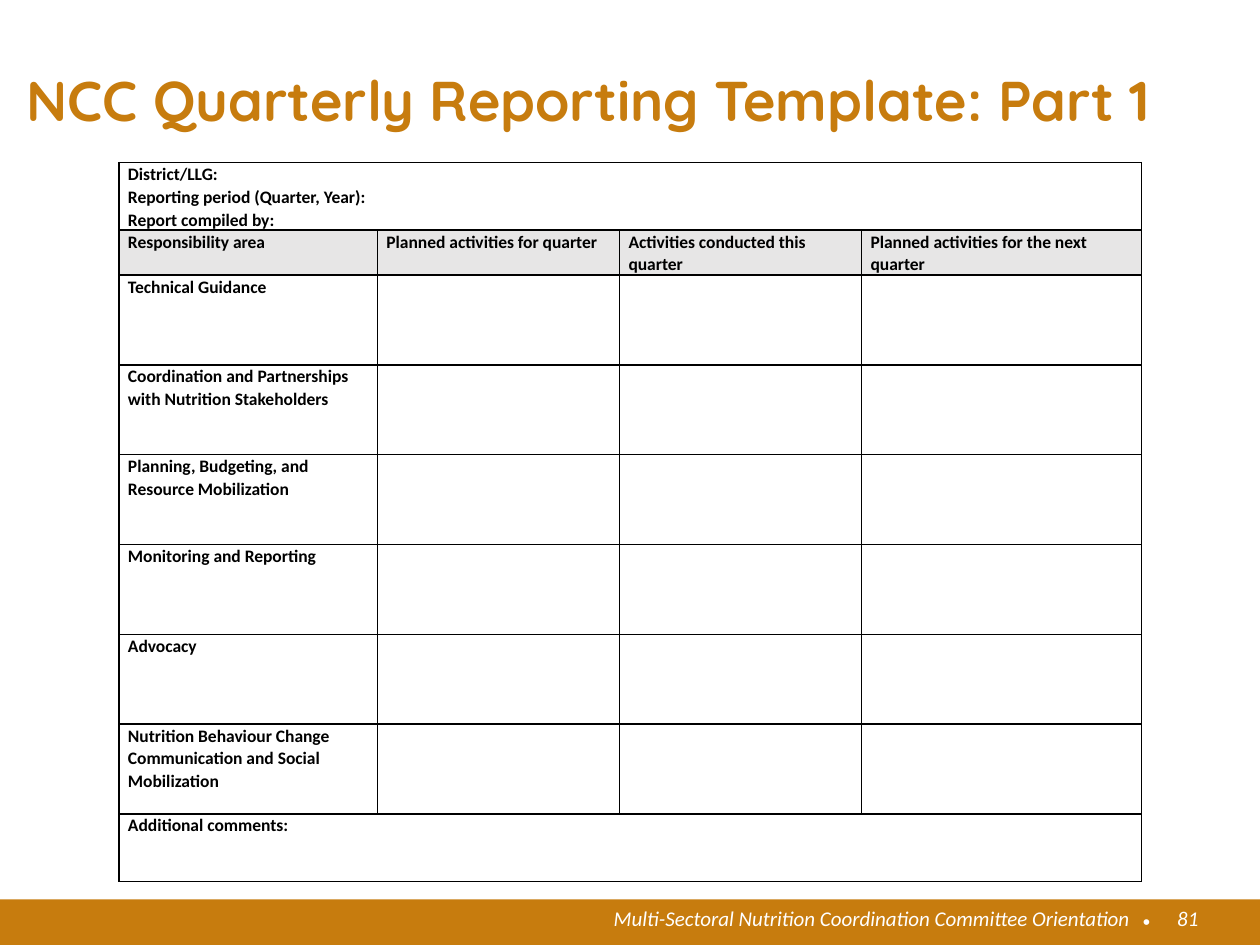
from pptx import Presentation
from pptx.dml.color import RGBColor
from pptx.enum.shapes import MSO_SHAPE
from pptx.enum.text import PP_ALIGN
from pptx.oxml import parse_xml
from pptx.oxml.ns import nsdecls
from pptx.util import Cm, Pt

RECT = MSO_SHAPE.RECTANGLE
LEFT, RIGHT = PP_ALIGN.LEFT, PP_ALIGN.RIGHT
COLORS = {"accent": "C77C0E", "white": "FFFFFF", "black": "000000", "header": "E7E6E6"}

REPORT_FIELDS = ["District/LLG:", "Reporting period (Quarter, Year):", "Report compiled by:"]
HEADERS = [
    "Responsibility area",
    "Planned activities for quarter",
    "Activities conducted this quarter",
    "Planned activities for the next quarter",
]
AREAS = [
    "Technical Guidance",
    "Coordination and Partnerships with Nutrition Stakeholders",
    "Planning, Budgeting, and Resource Mobilization",
    "Monitoring and Reporting",
    "Advocacy",
    "Nutrition Behaviour Change Communication and Social Mobilization",
]
COLUMN_WIDTHS = [5.21, 4.88, 4.88, 5.64]
ROW_HEIGHTS = [1.36, 0.9] + [1.81] * len(AREAS) + [1.36]


def rgb(name):
    """Return the named colour."""
    return RGBColor.from_string(COLORS[name])


def add_run(p, text, size, color, font="Calibri", bold=False, italic=False):
    """Add one formatted run to a paragraph."""
    r = p.add_run()
    r.text = text
    r.font.name, r.font.size = font, Pt(size)
    r.font.bold, r.font.italic = bold, italic
    r.font.color.rgb = rgb(color)


def add_text(s, box, text, size, color, align=LEFT, **style):
    """Add a text box without margins, placed in centimetres."""
    tf = s.shapes.add_textbox(*map(Cm, box)).text_frame
    tf.word_wrap = True
    tf.margin_left = tf.margin_right = tf.margin_top = tf.margin_bottom = 0
    p = tf.paragraphs[0]
    p.alignment = align
    add_run(p, text, size, color, **style)


def add_footer(s):
    """Add the coloured band with event name, dot and page number."""
    sp = s.shapes.add_shape(RECT, 0, Cm(18.13), Cm(25.4), Cm(0.92))
    sp.shadow.inherit = False
    sp.fill.solid()
    sp.fill.fore_color.rgb = rgb("accent")
    sp.line.fill.background()
    add_text(s, (23.32, 18.26, 0.84, 0.81), "81", 12, "white", RIGHT, italic=True)
    add_text(s, (12.29, 18.26, 10.49, 1.02),
             "Multi-Sectoral Nutrition Coordination Committee Orientation",
             12, "white", RIGHT, italic=True)
    add_text(s, (23.04, 18.31, 0.46, 0.51), "•", 12, "white", font="Arial")


def style_cell(cell, fill):
    """Set the margins, black borders and fill of a cell."""
    cell.margin_left = cell.margin_right = Cm(0.18)
    cell.margin_top = cell.margin_bottom = 0
    for side in ("lnL", "lnR", "lnT", "lnB"):
        cell._tc.get_or_add_tcPr().append(parse_xml(
            f'<a:{side} {nsdecls("a")} w="{Pt(1)}"><a:solidFill>'
            f'<a:srgbClr val="{COLORS["black"]}"/></a:solidFill></a:{side}>'))
    cell.fill.solid()
    cell.fill.fore_color.rgb = rgb(fill)


def write_cell(cell, lines):
    """Write bold lines into a cell, one paragraph each."""
    tf = cell.text_frame
    for i, line in enumerate(lines):
        p = tf.add_paragraph() if i else tf.paragraphs[0]
        p.line_spacing = 1.07
        add_run(p, line, 10, "black", bold=True)


def add_report_table(s):
    """Add the quarterly report form."""
    table = s.shapes.add_table(
        len(ROW_HEIGHTS), len(COLUMN_WIDTHS), Cm(2.4), Cm(3.28),
        Cm(sum(COLUMN_WIDTHS)), Cm(sum(ROW_HEIGHTS))).table
    table.first_row = table.horz_banding = False
    for column, width in zip(table.columns, COLUMN_WIDTHS):
        column.width = Cm(width)
    for i, (row, height) in enumerate(zip(table.rows, ROW_HEIGHTS)):
        row.height = Cm(height)
        for cell in row.cells:
            style_cell(cell, "header" if i == 1 else "white")
    last = len(ROW_HEIGHTS) - 1
    for i, lines in ((0, REPORT_FIELDS), (last, ["Additional comments:"])):
        table.cell(i, 0).merge(table.cell(i, len(COLUMN_WIDTHS) - 1))
        write_cell(table.cell(i, 0), lines)
    for j, header in enumerate(HEADERS):
        write_cell(table.cell(1, j), [header])
    for i, area in enumerate(AREAS, start=2):
        write_cell(table.cell(i, 0), [area])


def main():
    """Build the slide and save it."""
    prs = Presentation()
    prs.slide_width, prs.slide_height = Cm(25.4), Cm(19.05)
    s = prs.slides.add_slide(prs.slide_layouts[6])
    add_text(s, (0.53, 1.32, 23.83, 2.21), "NCC Quarterly Reporting Template: Part 1",
             32, "accent", font="Quicksand", bold=True)
    add_footer(s)
    add_report_table(s)
    prs.save("out.pptx")


if __name__ == "__main__":
    main()
